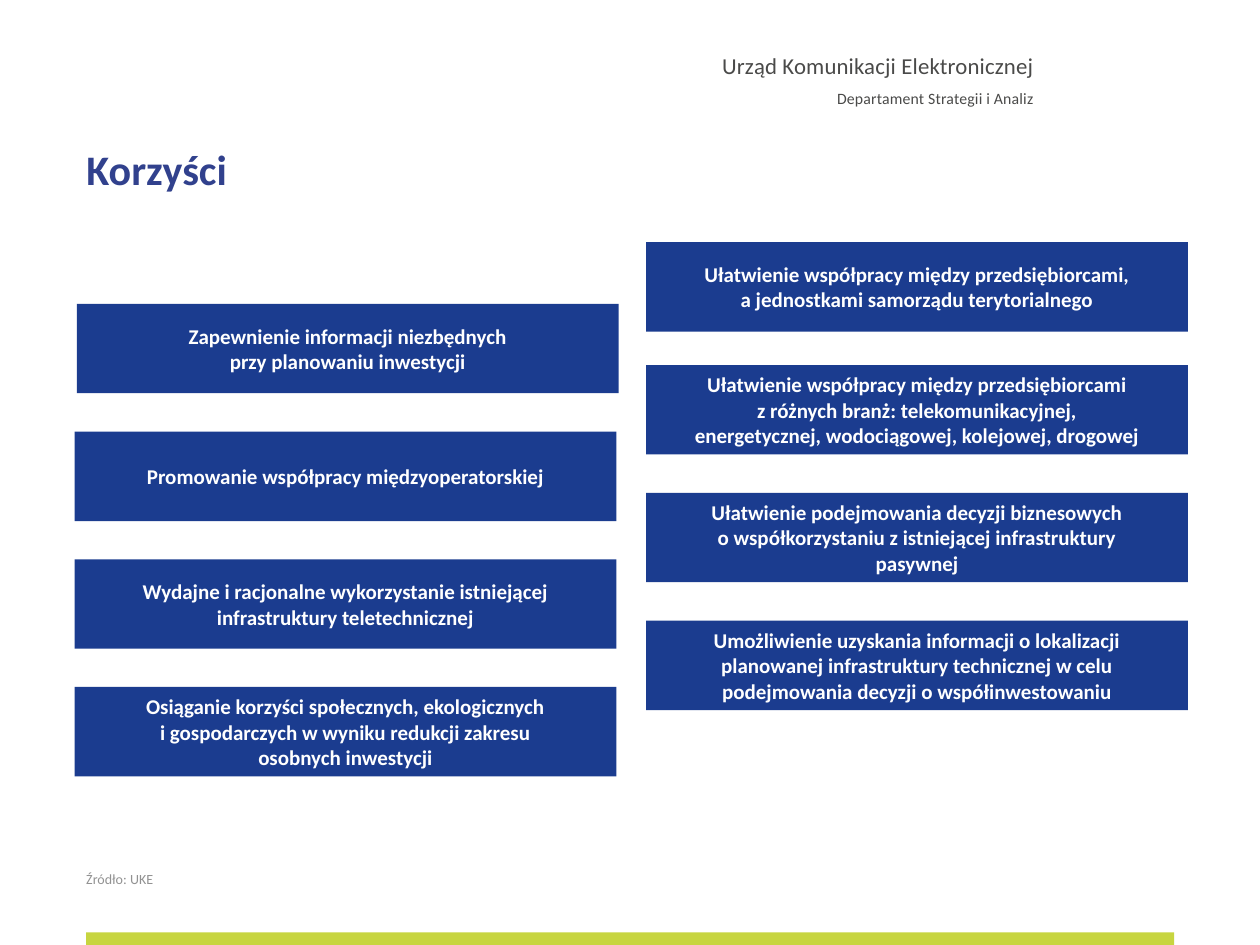
"""Builds the slide listing the benefits in two columns of blue boxes."""
from typing import NamedTuple

from pptx import Presentation
from pptx.dml.color import RGBColor
from pptx.enum.shapes import MSO_SHAPE as SHAPE
from pptx.enum.text import MSO_ANCHOR as ANCHOR, PP_ALIGN as ALIGN
from pptx.util import Pt

COLORS = {"box": "1B3C8F", "title": "31418D", "bar": "C7D540",
          "header": "4A4A49", "source": "929292", "white": "FFFFFF"}
FONT = "Calibri"
BOX_W, BOX_H = 309.6, 51.1


class Benefit(NamedTuple):
    left: float
    top: float
    lines: tuple[str, ...]


BENEFITS = [
    Benefit(43.9, 173.6, ("Zapewnienie informacji niezbędnych",
                          "przy planowaniu inwestycji")),
    Benefit(42.6, 246.7, ("Promowanie współpracy międzyoperatorskiej",)),
    Benefit(42.6, 319.6, ("Wydajne i racjonalne wykorzystanie istniejącej",
                          "infrastruktury teletechnicznej")),
    Benefit(42.6, 392.5, ("Osiąganie korzyści społecznych, ekologicznych",
                          "i gospodarczych w wyniku redukcji zakresu",
                          "osobnych inwestycji")),
    Benefit(369.2, 138.4, ("Ułatwienie współpracy między przedsiębiorcami,",
                           "a jednostkami samorządu terytorialnego")),
    Benefit(369.2, 208.6, ("Ułatwienie współpracy między przedsiębiorcami",
                           "z różnych branż: telekomunikacyjnej,",
                           "energetycznej, wodociągowej, kolejowej, drogowej")),
    Benefit(369.2, 281.6, ("Ułatwienie podejmowania decyzji biznesowych",
                           "o współkorzystaniu z istniejącej infrastruktury",
                           "pasywnej")),
    Benefit(369.2, 354.7, ("Umożliwienie uzyskania informacji o lokalizacji",
                           "planowanej infrastruktury technicznej w celu",
                           "podejmowania decyzji o współinwestowaniu")),
]


def add_text(tf, text: str, *, size: float, color: str, bold: bool = False,
             align=ALIGN.LEFT, line: float = 1.0, spacing: float = 0) -> None:
    p = tf.paragraphs[0] if not tf.text else tf.add_paragraph()
    p.alignment, p.line_spacing = align, line
    r = p.add_run()
    r.text = text
    font = r.font
    font.name, font.size, font.bold = FONT, Pt(size), bold
    font.color.rgb = RGBColor.from_string(COLORS[color])
    if spacing:
        r._r.get_or_add_rPr().set("spc", str(round(spacing * 100)))


def add_rect(s, left: float, top: float, width: float, height: float, color: str):
    sp = s.shapes.add_shape(SHAPE.RECTANGLE, Pt(left), Pt(top), Pt(width), Pt(height))
    sp.shadow.inherit = False
    sp.fill.solid()
    sp.fill.fore_color.rgb = RGBColor.from_string(COLORS[color])
    sp.line.fill.background()
    return sp


def add_box(s, left: float, top: float, width: float, height: float):
    tf = s.shapes.add_textbox(Pt(left), Pt(top), Pt(width), Pt(height)).text_frame
    tf.word_wrap = True
    return tf


def add_title(s, text: str) -> None:
    sp = s.shapes.title
    sp.left, sp.top, sp.width, sp.height = Pt(49.4), Pt(70.6), Pt(620.6), Pt(66.2)
    tf = sp.text_frame
    tf.margin_left, tf.margin_right = Pt(0), Pt(7.2)
    tf.margin_top = tf.margin_bottom = Pt(14.4)
    tf.vertical_anchor = ANCHOR.TOP
    add_text(tf, text, size=24, color="title", bold=True, line=0.9)


def add_benefit(s, benefit: Benefit) -> None:
    tf = add_rect(s, benefit.left, benefit.top, BOX_W, BOX_H, "box").text_frame
    tf.word_wrap = True
    tf.vertical_anchor = ANCHOR.MIDDLE
    for text in benefit.lines:
        add_text(tf, text, size=12, color="white", bold=True, align=ALIGN.CENTER)


def main() -> None:
    prs = Presentation()
    prs.slide_width, prs.slide_height = Pt(720), Pt(540)
    s = prs.slides.add_slide(prs.slide_layouts[5])

    add_rect(s, 49.2, 532.8, 621.8, 7.2, "bar")
    header = add_box(s, 105.1, 25.9, 492.5, 39.6)
    add_text(header, "Urząd Komunikacji Elektronicznej", size=13,
             color="header", align=ALIGN.RIGHT, spacing=0.1)
    add_text(header, "Departament Strategii i Analiz", size=9,
             color="header", align=ALIGN.RIGHT, line=1.5, spacing=0.1)
    add_text(add_box(s, 42.2, 493.9, 113, 17.3), "Źródło: UKE", size=8, color="source")

    add_title(s, "Korzyści")
    for benefit in BENEFITS:
        add_benefit(s, benefit)
    prs.save("out.pptx")


if __name__ == "__main__":
    main()
